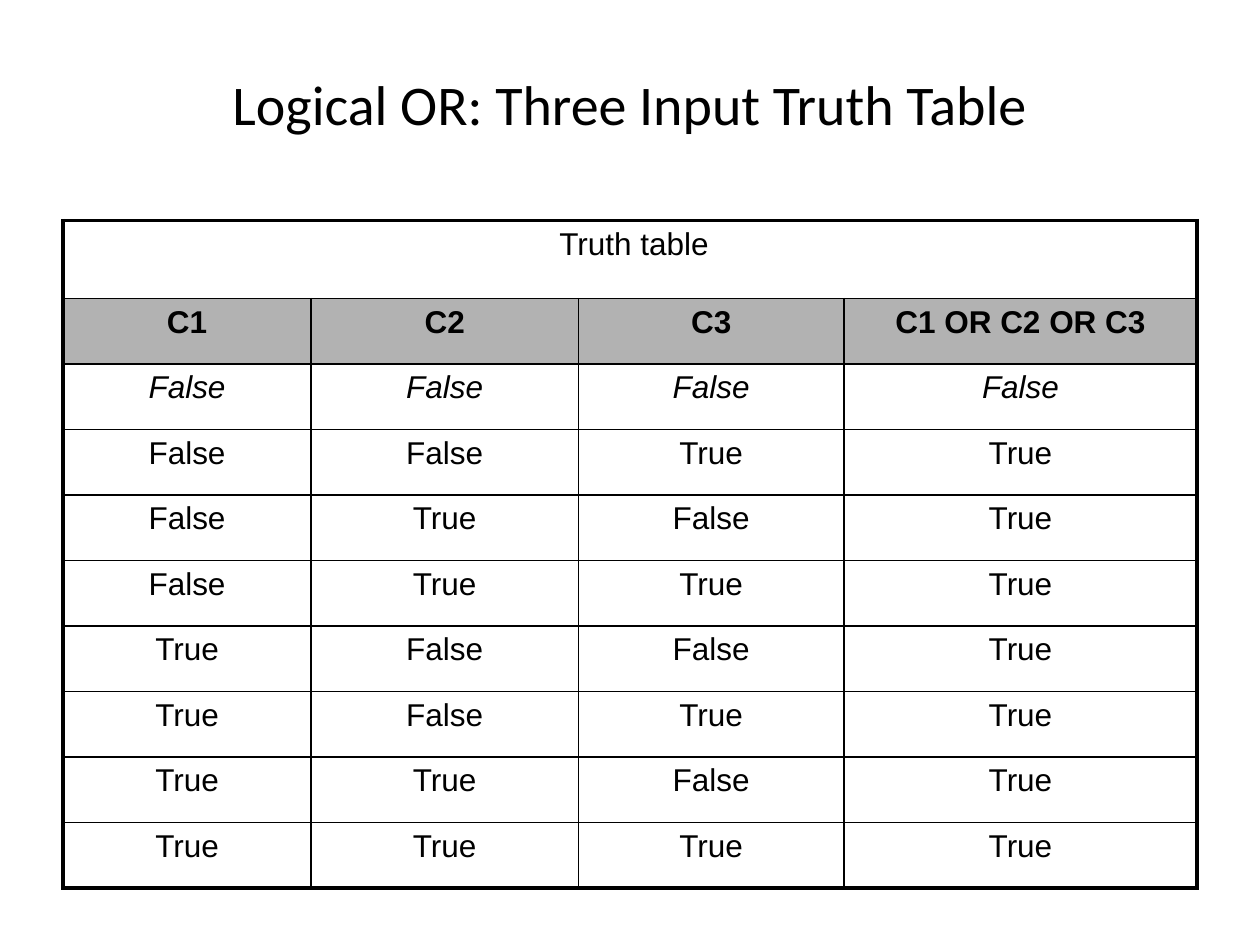
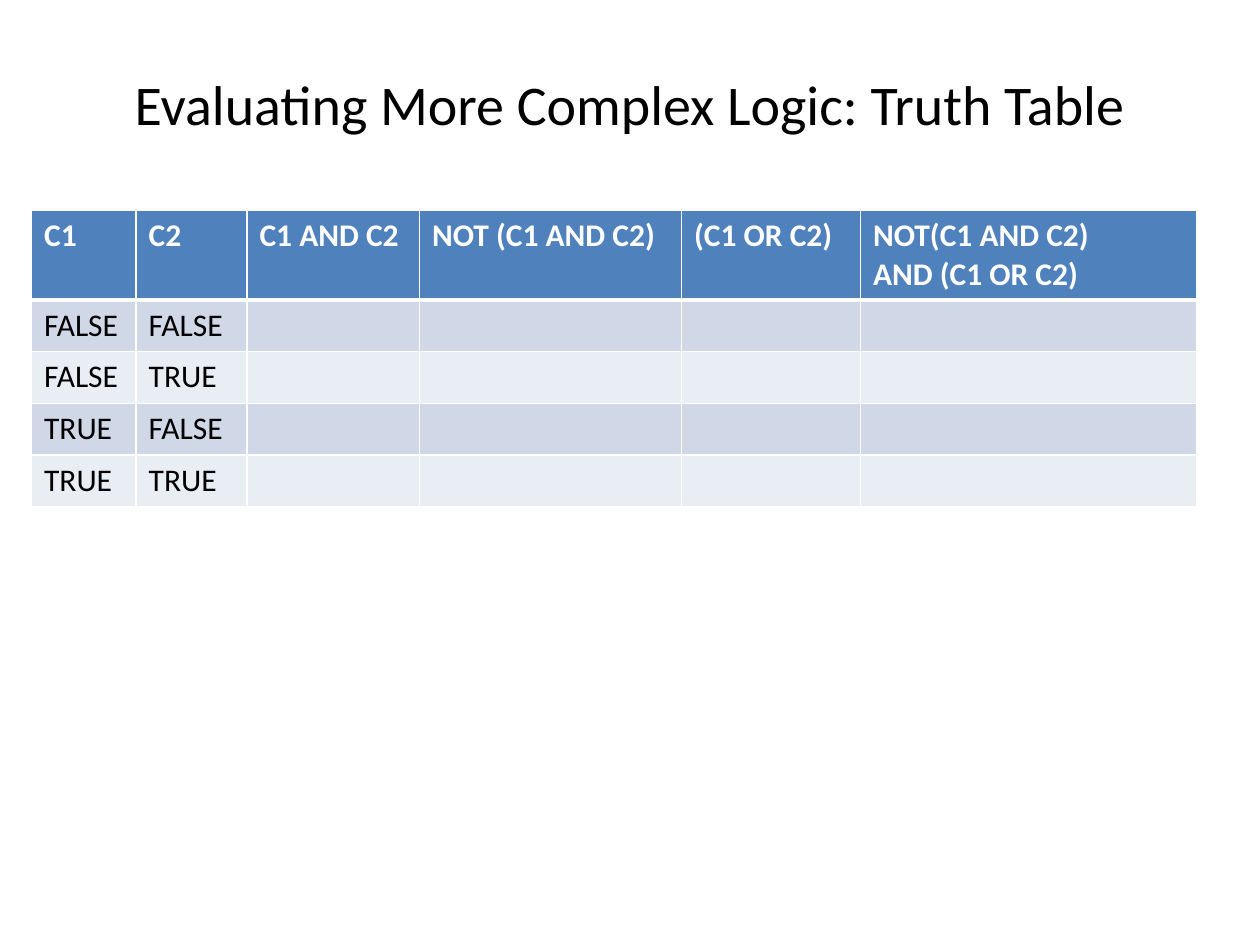
from dataclasses import dataclass
from itertools import product

from lxml import etree
from pptx import Presentation
from pptx.dml.color import RGBColor
from pptx.enum.text import MSO_ANCHOR, PP_ALIGN
from pptx.oxml.ns import qn
from pptx.util import Pt

CENTER = PP_ALIGN.CENTER
LEFT = PP_ALIGN.LEFT
MIDDLE = MSO_ANCHOR.MIDDLE
EMU_PER_PX = 9144
TITLE_ONLY = 5


@dataclass(frozen=True)
class Theme:
    black: str = "000000"
    white: str = "FFFFFF"
    gray: str = "B2B2B2"
    blue: str = "4F81BD"
    blue_band: str = "D0D8E8"
    pale_band: str = "E9EDF4"
    title_font: str = "Calibri"
    grid_font: str = "Arial"
    title_size: int = 32
    table_size: int = 18
    thin: float = 1
    frame: float = 2.25
    header_rule: float = 3


@dataclass(frozen=True)
class RowStyle:
    fill: str
    ink: str
    font: str
    align: PP_ALIGN
    bold: bool = False
    italic: bool = False


def px(length):
    return length * EMU_PER_PX


class SlideBuilder:
    def __init__(self, deck, theme):
        self.deck = deck
        self.theme = theme
        self.page = None

    def new_page(self, title):
        self.page = self.deck.slides.add_slide(self.deck.slide_layouts[TITLE_ONLY])
        box = self.page.shapes.title
        box.left, box.top, box.width, box.height = map(px, (50, 30, 900, 103))
        box.text_frame.text = title
        box.text_frame.vertical_anchor = MIDDLE
        para = box.text_frame.paragraphs[0]
        para.alignment = CENTER
        self.set_font(para, self.theme.title_font, self.theme.title_size, self.theme.black)

    def set_font(self, para, name, size, ink, bold=False, italic=False):
        para.font.name = name
        para.font.size = Pt(size)
        para.font.color.rgb = RGBColor.from_string(ink)
        para.font.bold = bold
        para.font.italic = italic

    def set_borders(self, cell, color, widths):
        properties = cell._tc.get_or_add_tcPr()
        for side, width in zip("LRTB", widths):
            line = etree.SubElement(properties, qn(f"a:ln{side}"), w=str(Pt(width)))
            fill = etree.SubElement(line, qn("a:solidFill"))
            etree.SubElement(fill, qn("a:srgbClr"), val=color)

    def fill_cell(self, cell, text, style):
        cell.fill.solid()
        cell.fill.fore_color.rgb = RGBColor.from_string(style.fill)
        cell.text_frame.text = text
        for para in cell.text_frame.paragraphs:
            para.alignment = style.align
            self.set_font(para, style.font, self.theme.table_size, style.ink,
                          style.bold, style.italic)

    def add_table(self, left, top, widths, heights, rows, styles,
                  border_color, border_widths, first_row=False, caption=False):
        table = self.page.shapes.add_table(
            len(heights), len(widths), px(left), px(top),
            px(sum(widths)), px(sum(heights))).table
        table.first_row = first_row
        table.horz_banding = False
        for column, width in zip(table.columns, widths):
            column.width = px(width)
        for row, height in zip(table.rows, heights):
            row.height = px(height)
        if caption:
            table.cell(0, 0).merge(table.cell(0, len(widths) - 1))
        for row_index, (texts, style) in enumerate(zip(rows, styles)):
            for column_index, text in enumerate(texts):
                cell = table.cell(row_index, column_index)
                last_column = column_index + cell.span_width - 1
                self.set_borders(cell, border_color,
                                 border_widths(row_index, column_index, last_column))
                self.fill_cell(cell, text, style)


def build_or_table(builder):
    theme = builder.theme
    builder.new_page("Logical OR: Three Input Truth Table")
    inputs = list(product((False, True), repeat=3))
    truth_rows = [[str(value) for value in (*values, any(values))] for values in inputs]
    rows = [[" Truth table"], ["C1", "C2", "C3", "C1 OR C2 OR C3"], *truth_rows]
    widths = [197, 212, 211, 280]
    plain = RowStyle(theme.white, theme.black, theme.grid_font, CENTER)
    header = RowStyle(theme.gray, theme.black, theme.grid_font, CENTER, bold=True)
    all_false = RowStyle(theme.white, theme.black, theme.grid_font, CENTER, italic=True)
    styles = [plain, header, all_false] + [plain] * (len(inputs) - 1)

    def framed(row, first_column, last_column):
        on_edge = (first_column == 0, last_column == len(widths) - 1,
                   row == 0, row == len(rows) - 1)
        return [theme.frame if edge else theme.thin for edge in on_edge]

    builder.add_table(50, 175, widths, [62] + [52] * (len(rows) - 1), rows, styles,
                      theme.black, framed, caption=True)


def build_complex_table(builder):
    theme = builder.theme
    builder.new_page("Evaluating More Complex Logic: Truth Table")
    headings = ["C1", "C2", "C1 AND C2", "NOT (C1 AND C2)", "(C1 OR C2)",
                "NOT(C1 AND C2)\nAND (C1 OR C2)"]
    unanswered = [""] * (len(headings) - 2)
    truth_rows = [[*values, *unanswered] for values in product(("FALSE", "TRUE"), repeat=2)]
    header = RowStyle(theme.blue, theme.white, theme.title_font, LEFT, bold=True)
    bands = [RowStyle(color, theme.black, theme.title_font, LEFT)
             for color in (theme.blue_band, theme.pale_band)]

    def ruled(row, first_column, last_column):
        return [theme.thin] * 3 + [theme.header_rule if row == 0 else theme.thin]

    builder.add_table(25, 167, [83, 88, 137, 208, 142, 267], [70] + [41] * len(truth_rows),
                      [headings, *truth_rows], [header, *bands * 2],
                      theme.white, ruled, first_row=True)


def main():
    deck = Presentation()
    deck.slide_width, deck.slide_height = px(1000), px(750)
    builder = SlideBuilder(deck, Theme())
    build_or_table(builder)
    build_complex_table(builder)
    deck.save("out.pptx")


if __name__ == "__main__":
    main()
